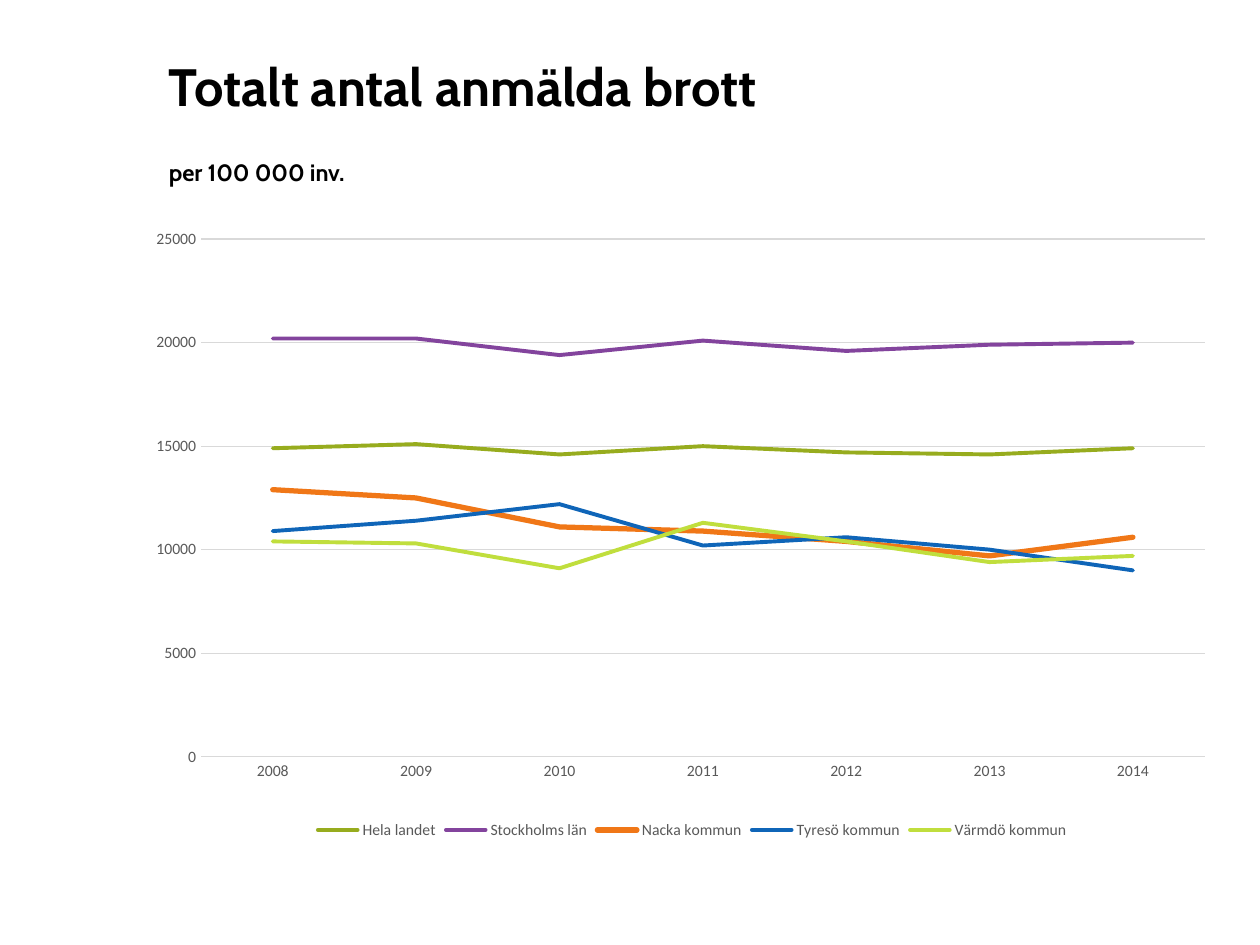
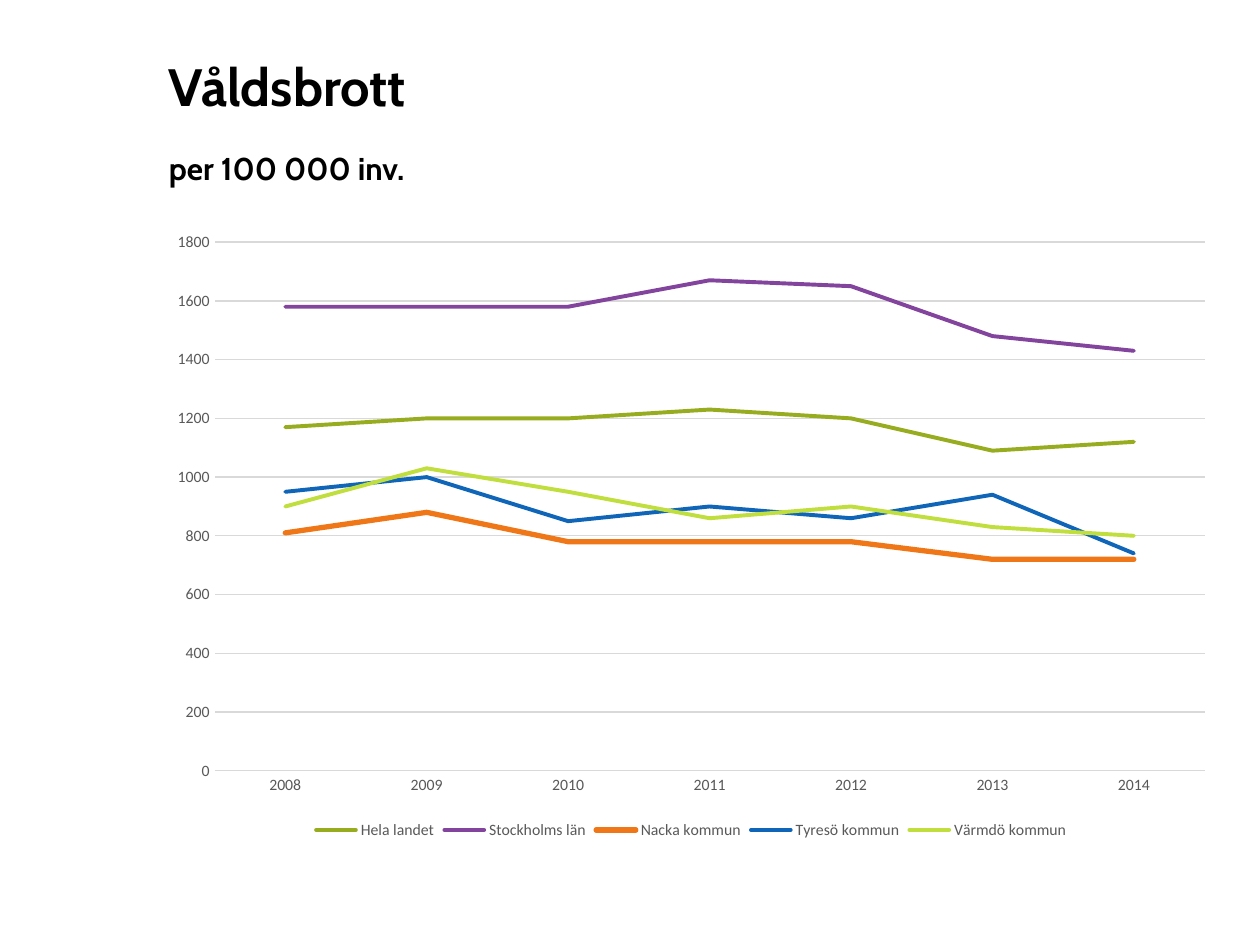
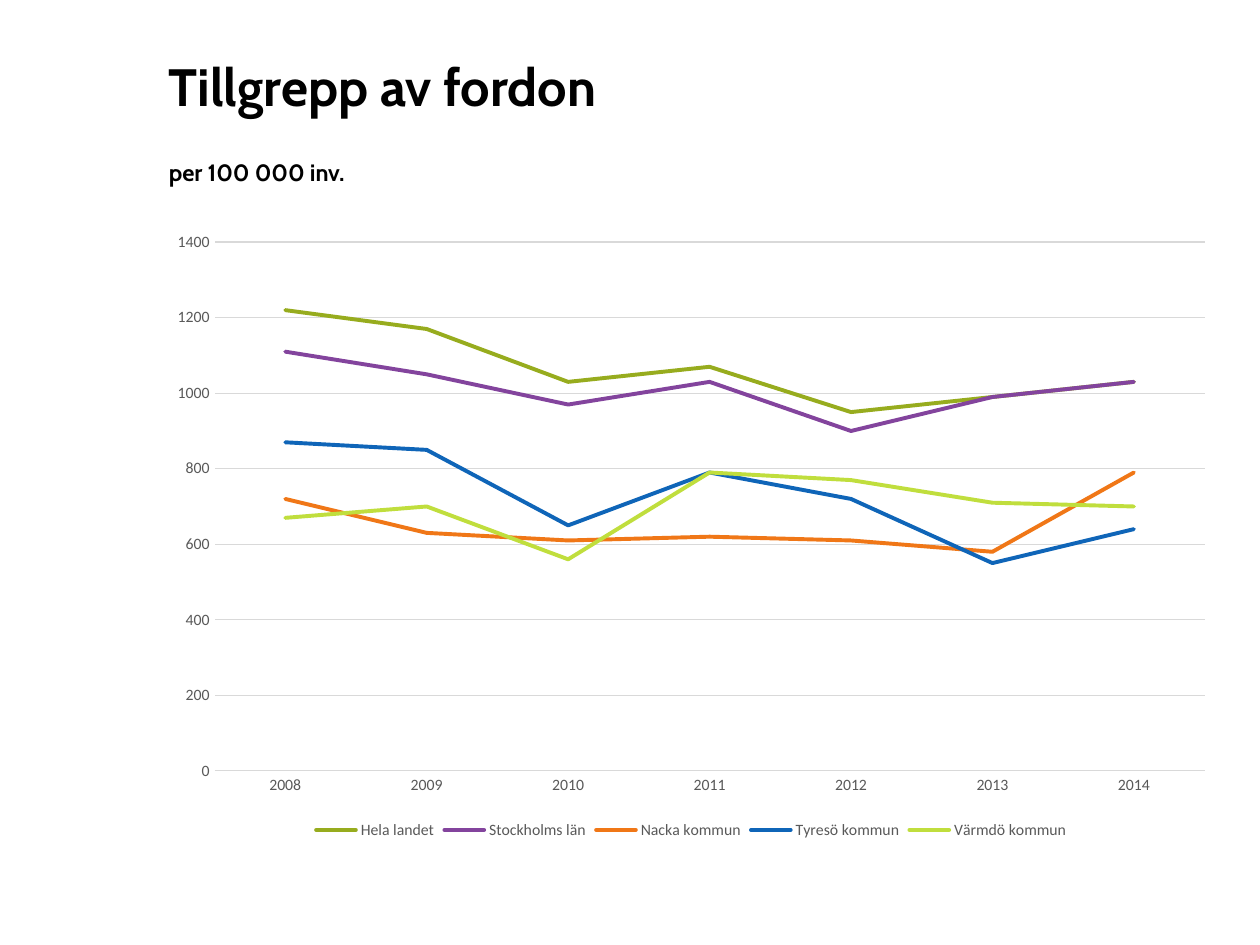
from lxml import etree
from pptx import Presentation
from pptx.chart.data import CategoryChartData
from pptx.dml.color import RGBColor
from pptx.enum.chart import XL_CHART_TYPE as CT, XL_LEGEND_POSITION as LP, XL_TICK_MARK as TM
from pptx.enum.text import MSO_ANCHOR as ANCHOR, MSO_AUTO_SIZE as AUTO, PP_ALIGN as ALIGN
from pptx.oxml.ns import qn
from pptx.util import Pt

LEFT, WIDTH = 89.28, 611.28
BLACK, GREY, GRID = "000000", "595959", "D9D9D9"
TITLE_FONT, CHART_FONT = "Cabin", "Calibri"
UNIT = "per 100 000 inv."
YEARS = [str(year) for year in range(2008, 2015)]
AREAS = [
    ("Hela landet", "97AC1E"),
    ("Stockholms län", "83449D"),
    ("Nacka kommun", "F07717"),
    ("Tyresö kommun", "0F65B8"),
    ("Värmdö kommun", "C0DE3D"),
]
TOTAL = [
    [14900, 15100, 14600, 15000, 14700, 14600, 14900],
    [20200, 20200, 19400, 20100, 19600, 19900, 20000],
    [12900, 12500, 11100, 10900, 10400, 9700, 10600],
    [10900, 11400, 12200, 10200, 10600, 10000, 9000],
    [10400, 10300, 9100, 11300, 10400, 9400, 9700],
]
VIOLENCE = [
    [1170, 1200, 1200, 1230, 1200, 1090, 1120],
    [1580, 1580, 1580, 1670, 1650, 1480, 1430],
    [810, 880, 780, 780, 780, 720, 720],
    [950, 1000, 850, 900, 860, 940, 740],
    [900, 1030, 950, 860, 900, 830, 800],
]
VEHICLES = [
    [1220, 1170, 1030, 1070, 950, 990, 1030],
    [1110, 1050, 970, 1030, 900, 990, 1030],
    [720, 630, 610, 620, 610, 580, 790],
    [870, 850, 650, 790, 720, 550, 640],
    [670, 700, 560, 790, 770, 710, 700],
]


def rgb(value):
    return RGBColor.from_string(value)


def set_font(font, name, size, color, bold=False):
    font.name = name
    font.size = Pt(size)
    font.bold = bold
    font.color.rgb = rgb(color)


def set_line(line, color, width):
    line.color.rgb = rgb(color)
    line.width = Pt(width)


def place(sp, top, height):
    sp.left, sp.top = Pt(LEFT), Pt(top)
    sp.width, sp.height = Pt(WIDTH), Pt(height)


def add_title(s, text, unit_size):
    sp = s.shapes.title
    place(sp, 21.6, 90)
    tf = sp.text_frame
    tf.word_wrap = True
    tf.auto_size = AUTO.NONE
    tf.vertical_anchor = ANCHOR.MIDDLE
    p = tf.paragraphs[0]
    p.alignment = ALIGN.LEFT
    p.line_spacing = Pt(40)
    r = p.add_run()
    r.text = text
    set_font(r.font, TITLE_FONT, 30, BLACK, True)
    p.add_line_break()
    r = p.add_run()
    r.text = UNIT
    set_font(r.font, TITLE_FONT, unit_size, BLACK, True)


def set_plot_layout(chart, box):
    area = chart.element.find(".//" + qn("c:plotArea"))
    for old in area.findall(qn("c:layout")):
        area.remove(old)
    layout = etree.Element(qn("c:layout"))
    area.insert(0, layout)
    manual = etree.SubElement(layout, qn("c:manualLayout"))
    settings = [("layoutTarget", "inner"), ("xMode", "edge"), ("yMode", "edge")]
    for tag, value in settings + list(zip("xywh", box)):
        etree.SubElement(manual, qn("c:" + tag)).set("val", str(value))


def style_axis(axis):
    axis.major_tick_mark = axis.minor_tick_mark = TM.NONE
    set_font(axis.tick_labels.font, CHART_FONT, 9, GREY)


def add_line_chart(s, rows, top_value, step, nacka_width, plot_box):
    data = CategoryChartData(number_format="0")
    data.categories = YEARS
    for (name, _), values in zip(AREAS, rows):
        data.add_series(name, values)
    frame = s.shapes.add_chart(CT.LINE, Pt(LEFT), Pt(126), Pt(WIDTH), Pt(356.4), data)
    chart = frame.chart
    chart.has_title = False
    set_font(chart.font, CHART_FONT, 10, BLACK)

    chart.has_legend = True
    chart.legend.position = LP.BOTTOM
    chart.legend.include_in_layout = False
    set_font(chart.legend.font, CHART_FONT, 9, GREY)

    style_axis(chart.category_axis)
    set_line(chart.category_axis.format.line, GRID, 0.75)
    axis = chart.value_axis
    style_axis(axis)
    axis.minimum_scale, axis.maximum_scale, axis.major_unit = 0, top_value, step
    axis.format.line.fill.background()
    axis.has_major_gridlines = True
    set_line(axis.major_gridlines.format.line, GRID, 0.75)

    plot = chart.plots[0]
    plot.vary_by_categories = False
    for series, (name, color) in zip(plot.series, AREAS):
        series.smooth = False
        set_line(series.format.line, color, nacka_width if name == "Nacka kommun" else 2.25)
        ln = series.format.element.find(".//" + qn("a:ln")) if hasattr(series.format, "element") else None
        if ln is None:
            ln = series._element.find(qn("c:spPr")).find(qn("a:ln"))
        ln.set("cap", "rnd")
        etree.SubElement(ln, qn("a:round"))
    if plot_box:
        set_plot_layout(chart, plot_box)


def add_crime_slide(prs, title, unit_size, rows, top_value, step, nacka_width=3, plot_box=None):
    s = prs.slides.add_slide(prs.slide_layouts[5])
    add_title(s, title, unit_size)
    add_line_chart(s, rows, top_value, step, nacka_width, plot_box)


def main():
    prs = Presentation()
    prs.slide_width, prs.slide_height = Pt(720), Pt(540)
    add_crime_slide(prs, "Totalt antal anmälda brott", 13.5, TOTAL, 25000, 5000,
                    plot_box=(0.04, 0.03, 0.94, 0.83))
    add_crime_slide(prs, "Våldsbrott", 18, VIOLENCE, 1800, 200)
    add_crime_slide(prs, "Tillgrepp av fordon", 13.5, VEHICLES, 1400, 200, nacka_width=2.25)
    prs.save("out.pptx")


if __name__ == "__main__":
    main()
